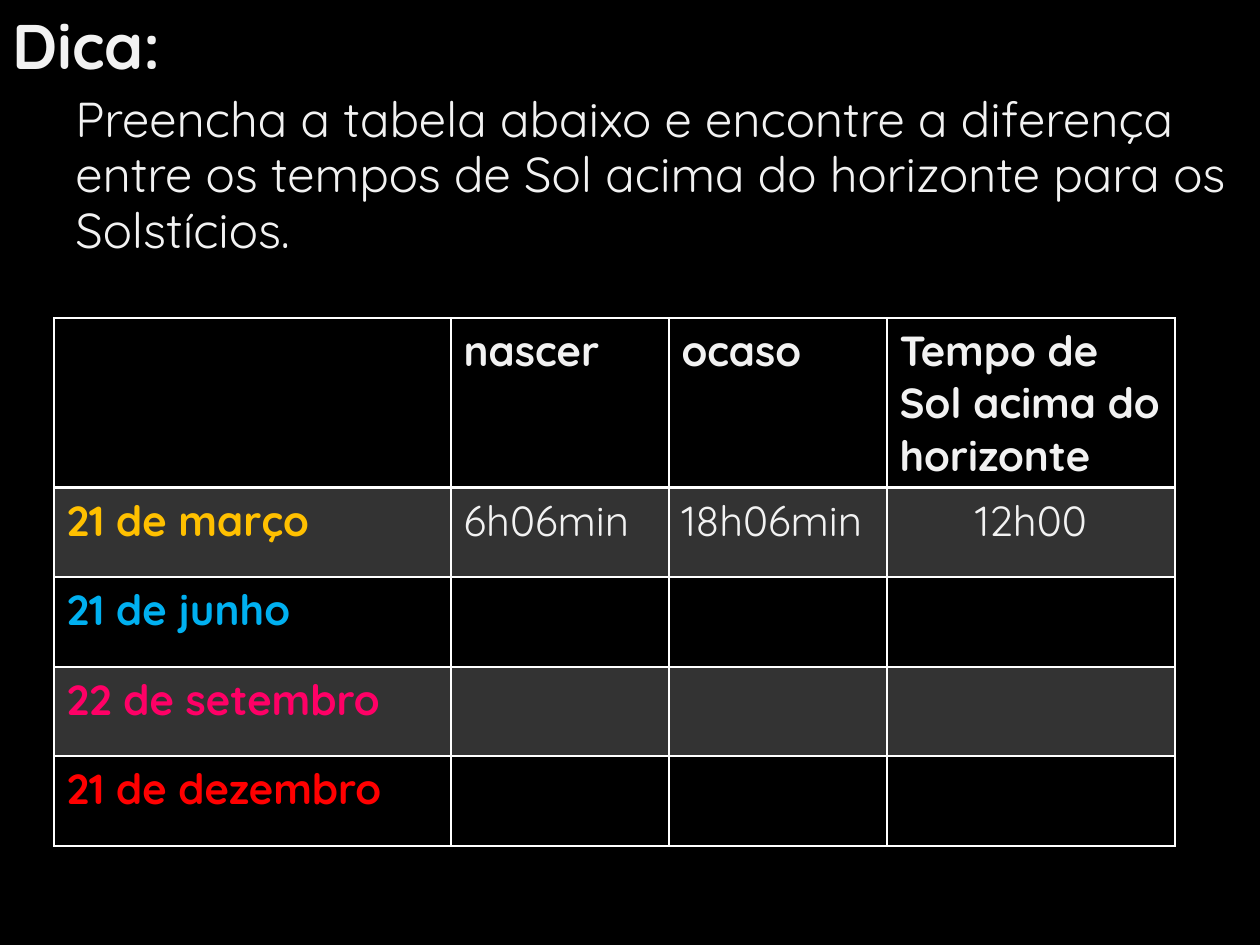
from dataclasses import dataclass

from lxml.etree import SubElement
from pptx import Presentation
from pptx.dml.color import RGBColor
from pptx.enum.text import PP_ALIGN
from pptx.oxml import parse_xml
from pptx.oxml.ns import nsdecls, qn
from pptx.util import Emu, Pt

EMU_PER_PX = 914400 / 126


def px(length):
    return Emu(round(length * EMU_PER_PX))


@dataclass(frozen=True)
class Theme:
    font: str = "Quicksand"
    background: str = "000000"
    text: str = "F2F2F2"
    line: str = "FFFFFF"
    band: str = "FFFFFF"
    band_opacity: int = 20
    march: str = "FFC000"
    june: str = "00B0F0"
    september: str = "FF0066"
    december: str = "FF0000"
    title_size: int = 36
    body_size: int = 28
    table_size: int = 24


class SlideBuilder:
    def __init__(self, deck, theme):
        self.theme = theme
        self.slide = deck.slides.add_slide(deck.slide_layouts[6])
        background = self.slide.background.fill
        background.solid()
        background.fore_color.rgb = RGBColor.from_string(theme.background)

    def set_text(self, para, text, size, color, bold=False):
        para.text = text
        para.font.name = self.theme.font
        para.font.size = Pt(size)
        para.font.bold = bold
        para.font.color.rgb = RGBColor.from_string(color)

    def heading(self, left, top, width, height, title, body, indent):
        box = self.slide.shapes.add_textbox(px(left), px(top), px(width), px(height))
        frame = box.text_frame
        frame.word_wrap = True
        self.set_text(frame.paragraphs[0], title, self.theme.title_size, self.theme.text, True)
        para = frame.add_paragraph()
        self.set_text(para, body, self.theme.body_size, self.theme.text)
        para.space_before = Pt(6)
        para.line_spacing = 0.95
        properties = para._p.get_or_add_pPr()
        properties.set("marL", str(px(indent)))
        properties.set("indent", "0")

    def table(self, left, top, columns, heights, rows):
        frame = self.slide.shapes.add_table(
            len(heights), len(columns), px(left), px(top), px(sum(columns)), px(sum(heights))
        )
        table = frame.table
        table.first_row = False
        table.horz_banding = False
        for column, width in zip(table.columns, columns):
            column.width = px(width)
        for row, height in zip(table.rows, heights):
            row.height = px(height)
        for row_index, row in enumerate(rows):
            for column_index, (text, color, bold, align) in enumerate(row):
                cell = table.cell(row_index, column_index)
                para = cell.text_frame.paragraphs[0]
                self.set_text(para, text, self.theme.table_size, color, bold)
                para.alignment = align
                self.fill_cell(cell, row_index % 2 == 1)
                self.border_cell(
                    cell,
                    top_width=2 if row_index == 1 else 1,
                    bottom_width=2 if row_index == 0 else 1,
                )

    def fill_cell(self, cell, banded):
        if not banded:
            cell.fill.background()
            return
        cell.fill.solid()
        cell.fill.fore_color.rgb = RGBColor.from_string(self.theme.band)
        color = cell._tc.tcPr.find(".//" + qn("a:srgbClr"))
        SubElement(color, qn("a:alpha"), val=str(self.theme.band_opacity * 1000))

    def border_cell(self, cell, top_width, bottom_width):
        widths = {"lnL": 1, "lnR": 1, "lnT": top_width, "lnB": bottom_width}
        for position, (side, width) in enumerate(widths.items()):
            border = parse_xml(
                f'<a:{side} {nsdecls("a")} w="{Pt(width)}"><a:solidFill>'
                f'<a:srgbClr val="{self.theme.line}"/></a:solidFill></a:{side}>'
            )
            cell._tc.tcPr.insert(position, border)


def main():
    theme = Theme()
    deck = Presentation()
    deck.slide_width = px(1260)
    deck.slide_height = px(945)
    page = SlideBuilder(deck, theme)
    page.heading(
        0, 0, 1260, 234,
        "Dica:",
        "Preencha a tabela abaixo e encontre a diferença entre os tempos de Sol "
        "acima do horizonte para os Solstícios.",
        indent=63,
    )

    headers = ["", "nascer", "ocaso", "Tempo de Sol acima do horizonte"]
    dates = [
        ("21 de março", theme.march, ["6h06min", "18h06min", "12h00"]),
        ("21 de junho", theme.june, [""] * 3),
        ("22 de setembro", theme.september, [""] * 3),
        ("21 de dezembro", theme.december, [""] * 3),
    ]
    alignments = [PP_ALIGN.LEFT, PP_ALIGN.LEFT, PP_ALIGN.CENTER]
    rows = [[(text, theme.text, True, PP_ALIGN.LEFT) for text in headers]]
    for date, color, times in dates:
        values = [(time, theme.text, False, align) for time, align in zip(times, alignments)]
        rows.append([(date, color, True, PP_ALIGN.LEFT), *values])
    page.table(54, 318, [397, 218, 218, 288], [170, 89, 90, 89, 90], rows)
    deck.save("out.pptx")


if __name__ == "__main__":
    main()
